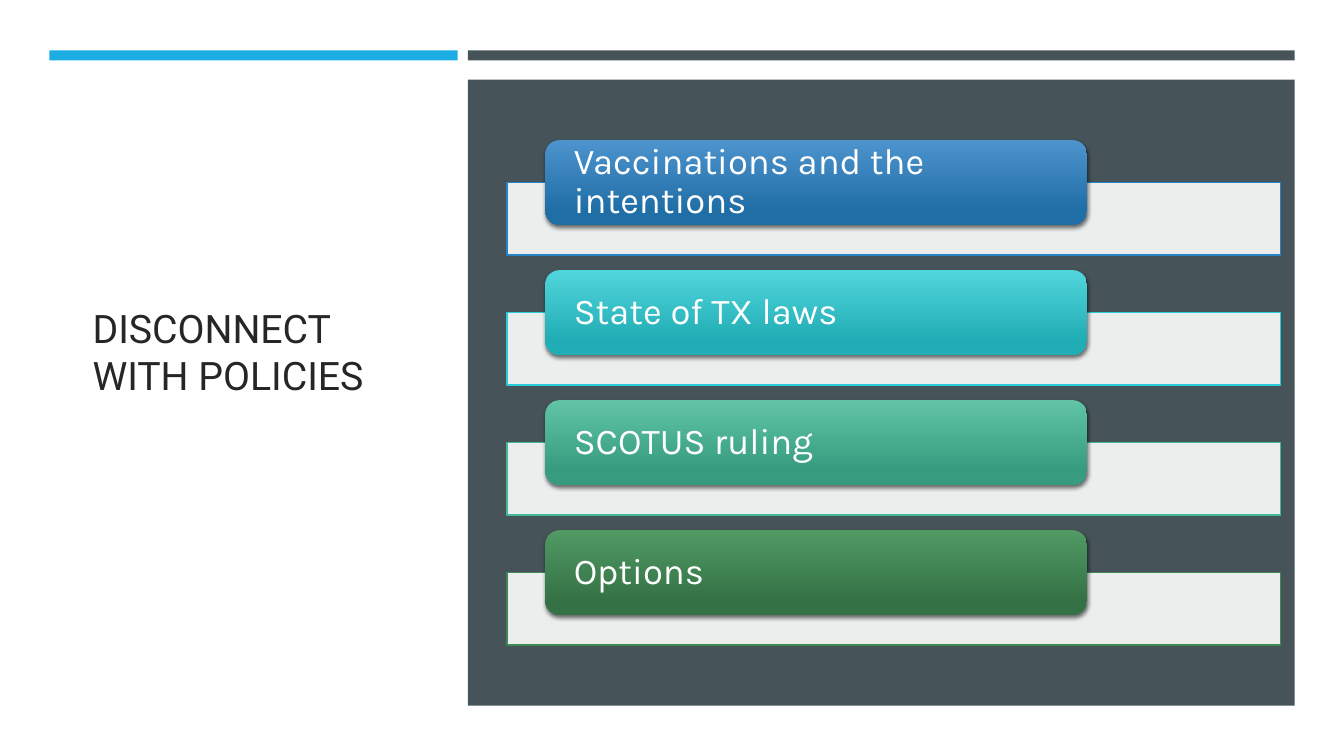
"""Build the slide on the disconnect with policies."""
from lxml.etree import SubElement
from pptx import Presentation
from pptx.dml.color import RGBColor
from pptx.enum.shapes import MSO_SHAPE as Shape
from pptx.enum.text import MSO_ANCHOR as Anchor, PP_ALIGN as Align
from pptx.oxml.ns import qn
from pptx.util import Inches, Pt

TITLE = "DISCONNECT WITH POLICIES"
WHITE = RGBColor(0xFF, 0xFF, 0xFF)
INK = RGBColor(0x26, 0x26, 0x26)
SLATE = RGBColor(0x46, 0x53, 0x59)
SKY = RGBColor(0x1C, 0xAD, 0xE4)

TOPICS = [
    ("Vaccinations and the intentions", RGBColor(0x26, 0x83, 0xC6),
     RGBColor(0x4D, 0x93, 0xCD), RGBColor(0x20, 0x6E, 0xA6)),
    ("State of TX laws", RGBColor(0x27, 0xCE, 0xD7),
     RGBColor(0x51, 0xD5, 0xDC), RGBColor(0x21, 0xAD, 0xB5)),
    ("SCOTUS ruling", RGBColor(0x42, 0xBA, 0x97),
     RGBColor(0x60, 0xC3, 0xA5), RGBColor(0x37, 0x9C, 0x7F)),
    ("Options", RGBColor(0x3E, 0x88, 0x53),
     RGBColor(0x51, 0x9A, 0x64), RGBColor(0x34, 0x72, 0x46)),
]
PANELS = [
    ((0.49, 0.5, 4.05, 0.1), SKY),
    ((4.64, 0.5, 8.2, 0.1), SLATE),
    ((4.64, 0.79, 8.2, 6.21), SLATE),
]
TITLE_BOX = (0.82, 1.14, 3.34, 5.15)
TITLE_FORMAT = {"name": "Roboto", "size": Pt(28)}
TOPIC_FORMAT = {"name": "Karla", "size": Pt(26)}
TITLE_FRAME = {"word_wrap": True, "vertical_anchor": Anchor.MIDDLE,
               "margin_bottom": Inches(0.5)}
TOPIC_FRAME = {"word_wrap": True, "vertical_anchor": Anchor.MIDDLE,
               "margin_left": Inches(0.24), "margin_right": Inches(0.24),
               "margin_top": 0, "margin_bottom": 0}
FIRST_TOP, PITCH, BAND_DROP = 1.39, 1.29, 0.42


def add_block(page, kind, place):
    block = page.shapes.add_shape(kind, *map(Inches, place))
    block.shadow.inherit = False
    block.line.fill.background()
    return block


def write(box, text, frame_format, font_format, color):
    frame = box.text_frame
    for name, value in frame_format.items():
        setattr(frame, name, value)
    para = frame.paragraphs[0]
    para.alignment = Align.LEFT
    span = para.add_run()
    span.text = text
    for name, value in font_format.items():
        setattr(span.font, name, value)
    span.font.color.rgb = color
    return para


def add_alpha(color_element, percent):
    SubElement(color_element, qn("a:alpha"), val=str(percent * 1000))


def add_shadow(block):
    effects = block._element.spPr.find(qn("a:effectLst"))
    shadow = SubElement(effects, qn("a:outerShdw"), blurRad=str(Pt(3)),
                        dist=str(Pt(2)), dir="5400000", rotWithShape="0")
    add_alpha(SubElement(shadow, qn("a:srgbClr"), val="000000"), 55)


def add_topic(page, top, text, edge, light, dark):
    band = add_block(page, Shape.RECTANGLE, (5.03, top + BAND_DROP, 7.67, 0.72))
    band.fill.solid()
    band.fill.fore_color.rgb = WHITE
    add_alpha(band._element.spPr.find(qn("a:solidFill"))[0], 90)
    band.line.color.rgb = edge
    band.line.width = Pt(1)

    pill = add_block(page, Shape.ROUNDED_RECTANGLE, (5.41, top, 5.37, 0.84))
    pill.fill.gradient()
    pill.fill.gradient_angle = 270
    for stop, color, position in zip(pill.fill.gradient_stops, (light, dark), (0, 0.84)):
        stop.color.rgb = color
        stop.position = position
    add_shadow(pill)
    write(pill, text, TOPIC_FRAME, TOPIC_FORMAT, WHITE).line_spacing = 0.9


def main():
    deck = Presentation()
    deck.slide_width, deck.slide_height = Inches(13.33), Inches(7.5)
    page = deck.slides.add_slide(deck.slide_layouts[6])
    page.background.fill.solid()
    page.background.fill.fore_color.rgb = WHITE

    title = page.shapes.add_textbox(*map(Inches, TITLE_BOX))
    write(title, TITLE, TITLE_FRAME, TITLE_FORMAT, INK)
    for place, color in PANELS:
        panel = add_block(page, Shape.RECTANGLE, place)
        panel.fill.solid()
        panel.fill.fore_color.rgb = color
    for index, topic in enumerate(TOPICS):
        add_topic(page, FIRST_TOP + index * PITCH, *topic)
    deck.save("out.pptx")


if __name__ == "__main__":
    main()
